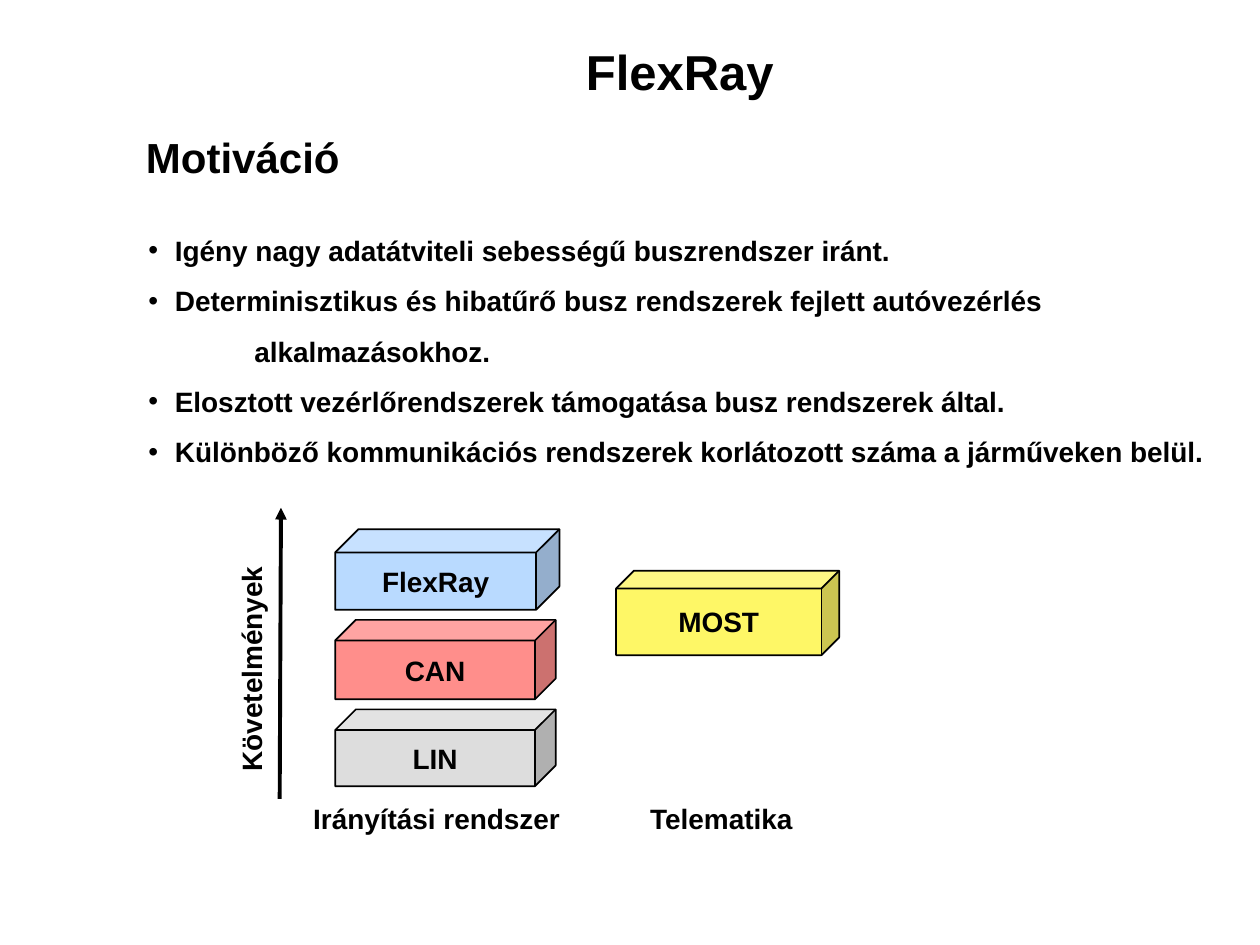
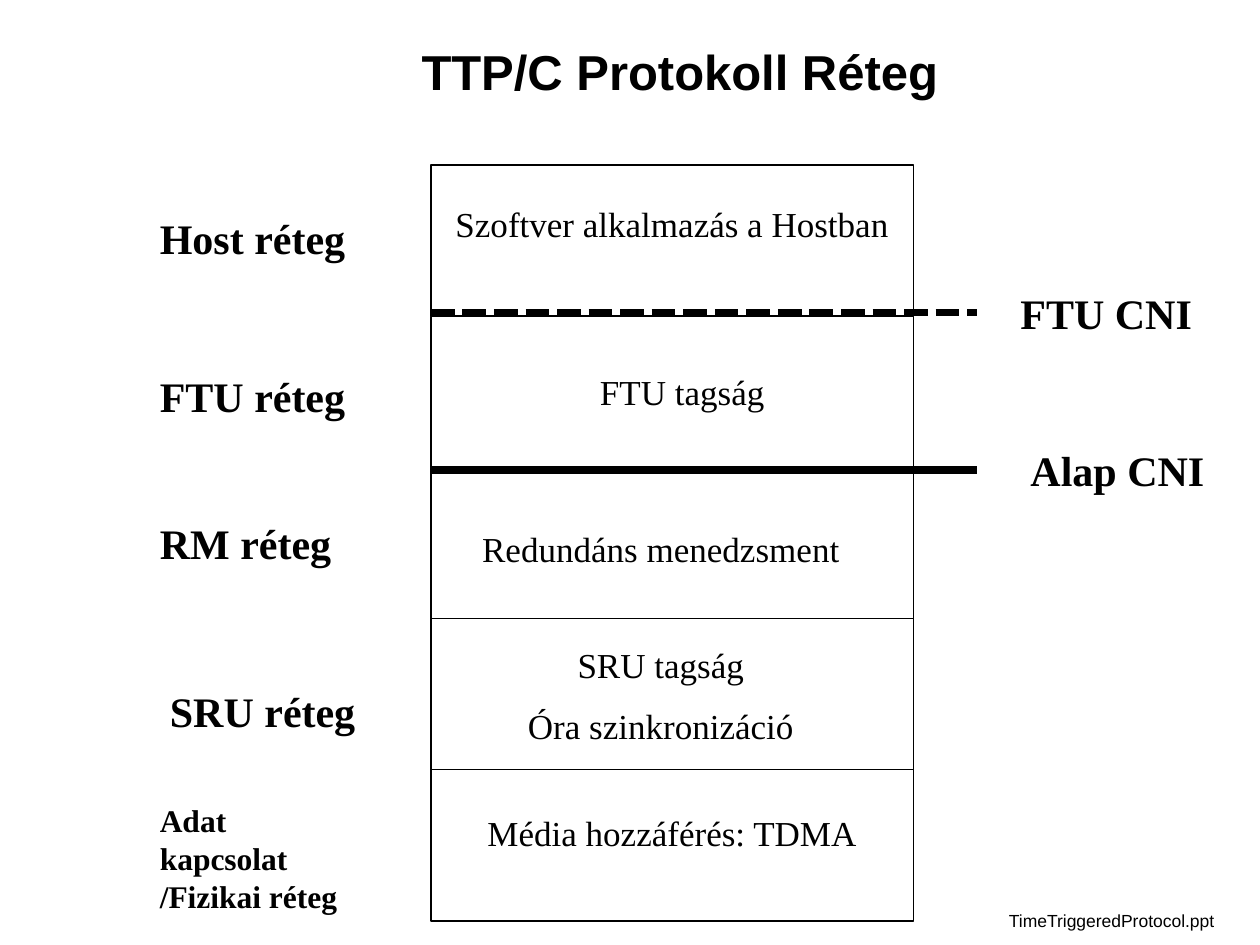
"""Build two slides: why FlexRay is needed, and the layers of the TTP/C protocol."""
from dataclasses import dataclass

from lxml import etree
from pptx import Presentation
from pptx import util as u
from pptx.dml.color import RGBColor
from pptx.enum import dml, shapes, text
from pptx.oxml import ns

SCALE = 9144
COLOURS = {
    "ink": "000000",
    "paper": "FFFFFF",
    "flexray": "B9DAFF",
    "can": "FF8E8B",
    "lin": "DDDDDD",
    "most": "FEF766",
}
SANS, SERIF = "Arial", "Times New Roman"
LEFT, CENTRE = text.PP_ALIGN.LEFT, text.PP_ALIGN.CENTER
TOP, MIDDLE, BOTTOM = (
    text.MSO_ANCHOR.TOP, text.MSO_ANCHOR.MIDDLE, text.MSO_ANCHOR.BOTTOM)

STACK_LEFT, STACK_TOP, STACK_WIDTH, LAYER_HEIGHT, LAYER_COUNT = 342, 131, 383, 120, 5
INTERFACE_RIGHT = 775


@dataclass
class Frame:
    left: int
    top: int
    width: int
    height: int

    def emu(self) -> tuple:
        return px(self.left), px(self.top), px(self.width), px(self.height)


@dataclass
class Label:
    words: str
    frame: Frame


@dataclass
class Bus:
    name: str
    colour: str
    frame: Frame
    depth: float


@dataclass
class Point:
    words: str
    margin: int = 21
    bullet: bool = True


MOTIVES = [
    Point("Igény nagy adatátviteli sebességű buszrendszer iránt."),
    Point("Determinisztikus és hibatűrő busz rendszerek fejlett autóvezérlés"),
    Point("alkalmazásokhoz.", margin=84, bullet=False),
    Point("Elosztott vezérlőrendszerek támogatása busz rendszerek által."),
    Point("Különböző kommunikációs rendszerek korlátozott száma a járműveken belül."),
]
BUSES = [
    Bus("LIN", "lin", Frame(266, 563, 175, 61), 0.27),
    Bus("CAN", "can", Frame(266, 492, 175, 63), 0.26),
    Bus("MOST", "most", Frame(489, 453, 177, 67), 0.21),
    Bus("FlexRay", "flexray", Frame(266, 420, 178, 64), 0.29),
]
DOMAINS = [
    Label("Telematika", Frame(505, 631, 135, 37)),
    Label("Irányítási rendszer", Frame(237, 631, 219, 37)),
]
TASKS = [
    Label("Szoftver alkalmazás a Hostban", Frame(350, 156, 367, 44)),
    Label("FTU tagság", Frame(375, 289, 333, 43)),
    Label("Redundáns menedzsment", Frame(358, 414, 333, 43)),
    Label("SRU tagság\nÓra szinkronizáció", Frame(358, 506, 333, 93)),
    Label("Média hozzáférés: TDMA", Frame(367, 639, 333, 43)),
]
SIDE_LABELS = [
    Label("Host réteg", Frame(117, 164, 192, 50)),
    Label("FTU réteg", Frame(117, 289, 192, 50)),
    Label("RM réteg", Frame(117, 406, 192, 50)),
    Label("SRU réteg", Frame(125, 539, 192, 50)),
    Label("FTU CNI", Frame(800, 223, 192, 50)),
    Label("Alap CNI", Frame(808, 348, 192, 50)),
]


def px(length: int) -> u.Emu:
    return u.Emu(length * SCALE)


def colour(name: str) -> RGBColor:
    return RGBColor.from_string(COLOURS[name])


def write(box, words: str, *, size: int = 16, font: str = SANS, bold: bool = True,
          align=LEFT, anchor=TOP, wrap: bool = True, gap: int = 0,
          spacing: float = 1.0) -> list:
    frame = box.text_frame
    frame.auto_size = text.MSO_AUTO_SIZE.NONE
    frame.word_wrap = wrap
    frame.vertical_anchor = anchor
    for index, line in enumerate(words.split("\n")):
        para = frame.add_paragraph() if index else frame.paragraphs[0]
        para.alignment = align
        para.line_spacing = spacing
        para.space_before = u.Pt(gap if index else 0)
        span = para.add_run()
        span.text = line
        span.font.size = u.Pt(size)
        span.font.name = font
        span.font.bold = bold
        span.font.color.rgb = colour("ink")
    return list(frame.paragraphs)


def add_label(page, label: Label, **style):
    box = page.shapes.add_textbox(*label.frame.emu())
    write(box, label.words, **style)
    return box


def add_page(deck, title: str):
    page = deck.slides.add_slide(deck.slide_layouts[5])
    box = page.shapes.title
    box.left, box.top, box.width, box.height = Frame(185, 28, 709, 57).emu()
    write(box, title, size=28, align=CENTRE)
    return page


def add_solid(page, kind, frame: Frame, fill: str, width: float):
    solid = page.shapes.add_shape(kind, *frame.emu())
    solid.shadow.inherit = False
    solid.fill.solid()
    solid.fill.fore_color.rgb = colour(fill)
    solid.line.color.rgb = colour("ink")
    solid.line.width = u.Pt(width)
    return solid


def add_line(page, start: tuple, end: tuple, width: float):
    line = page.shapes.add_connector(
        shapes.MSO_CONNECTOR.STRAIGHT, *map(px, start + end))
    line.line.color.rgb = colour("ink")
    line.line.width = u.Pt(width)
    etree.SubElement(line._element.spPr, ns.qn("a:effectLst"))
    return line


def add_points(page, points: list, frame: Frame) -> None:
    box = page.shapes.add_textbox(*frame.emu())
    words = "\n".join(point.words for point in points)
    for para, point in zip(write(box, words, wrap=False, spacing=1.5), points):
        layout = para._p.get_or_add_pPr()
        layout.set("marL", str(px(point.margin)))
        layout.set("indent", str(px(-point.margin if point.bullet else 0)))
        if point.bullet:
            etree.SubElement(layout, ns.qn("a:buFont"), typeface=SANS)
            etree.SubElement(layout, ns.qn("a:buChar"), char="•")


def build_motivation(deck) -> None:
    page = add_page(deck, "FlexRay")
    add_points(page, MOTIVES, Frame(108, 167, 862, 207))
    add_label(page, Label("Motiváció", Frame(106, 103, 208, 46)), size=24, anchor=BOTTOM)

    axis = add_line(page, (223, 403), (222, 634), 2.25)
    etree.SubElement(axis.line._get_or_add_ln(), ns.qn("a:headEnd"), type="triangle")
    demand = add_label(page, Label("Követelmények", Frame(107, 511, 185, 37)), wrap=False)
    demand.rotation = 270

    for domain in DOMAINS:
        add_label(page, domain, align=CENTRE, wrap=False)
    for bus in BUSES:
        cube = add_solid(page, shapes.MSO_SHAPE.CUBE, bus.frame, bus.colour, 1)
        cube.adjustments[0] = bus.depth
        write(cube, bus.name, align=CENTRE, anchor=MIDDLE, wrap=False)


def build_layers(deck) -> None:
    page = add_page(deck, "TTP/C Protokoll Réteg")
    for row in range(LAYER_COUNT):
        frame = Frame(STACK_LEFT, STACK_TOP + row * LAYER_HEIGHT, STACK_WIDTH, LAYER_HEIGHT)
        add_solid(page, shapes.MSO_SHAPE.RECTANGLE, frame, "paper", 0.75)
    for task in TASKS:
        add_label(page, task, size=20, font=SERIF, bold=False, align=CENTRE, gap=11)

    ftu_line, base_line = (
        add_line(page, (STACK_LEFT, y), (INTERFACE_RIGHT, y), 4.5) for y in (248, 373))
    ftu_line.line.dash_style = dml.MSO_LINE.SQUARE_DOT

    for label in SIDE_LABELS:
        add_label(page, label, size=24, font=SERIF)
    add_label(page, Label("Adat kapcsolat /Fizikai réteg", Frame(117, 631, 170, 97)),
              size=18, font=SERIF)
    add_label(page, Label("TimeTriggeredProtocol.ppt", Frame(791, 717, 186, 27)),
              size=10, bold=False, wrap=False)


def main() -> None:
    deck = Presentation()
    deck.slide_width, deck.slide_height = px(1000), px(750)
    build_motivation(deck)
    build_layers(deck)
    deck.save("out.pptx")


if __name__ == "__main__":
    main()
